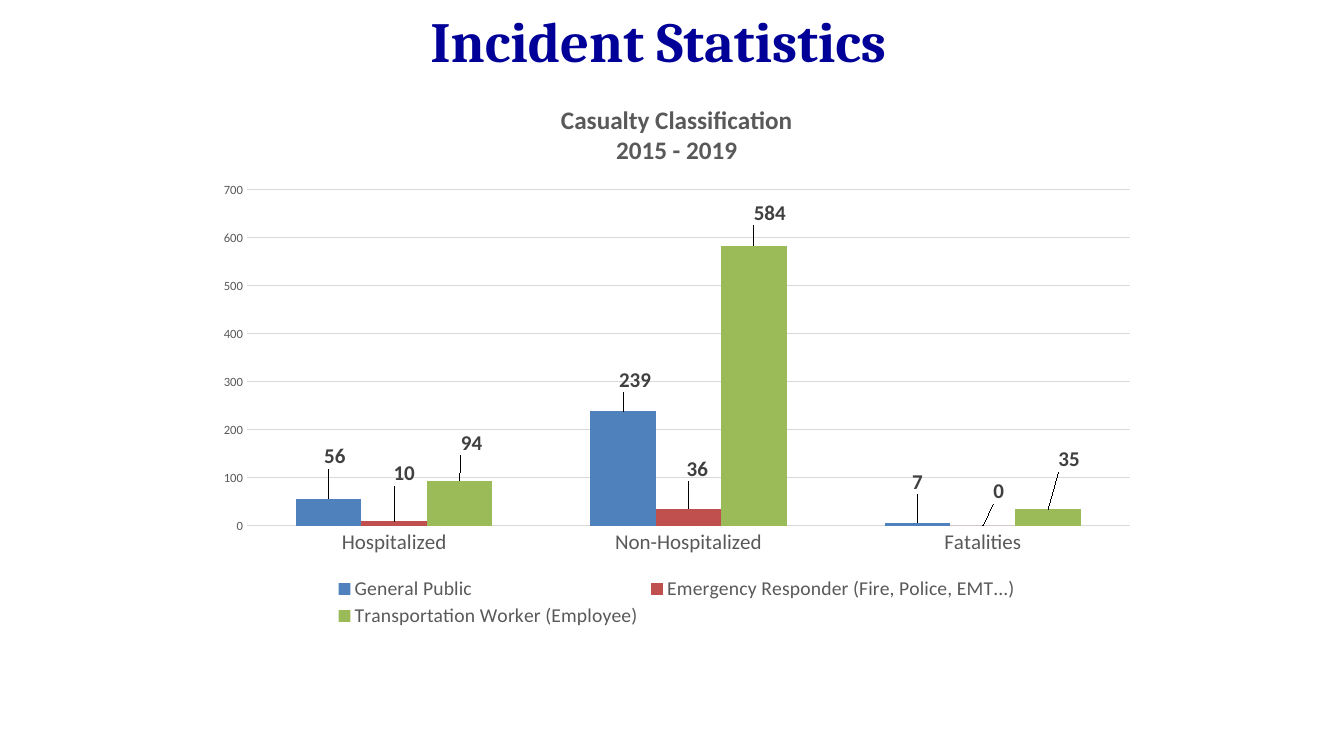
from lxml import etree
from pptx import Presentation
from pptx.chart.data import CategoryChartData
from pptx.dml.color import RGBColor
from pptx.enum.chart import XL_CHART_TYPE, XL_LABEL_POSITION, XL_LEGEND_POSITION, XL_TICK_MARK
from pptx.enum.text import MSO_ANCHOR, PP_ALIGN
from pptx.oxml.ns import qn
from pptx.util import Pt

PX = 9144000 / 1008
NAVY = RGBColor(0x00, 0x00, 0x99)
GRAY = RGBColor(0x59, 0x59, 0x59)
DARK = RGBColor(0x40, 0x40, 0x40)
GRID = RGBColor(0xD9, 0xD9, 0xD9)
BLUE = RGBColor(0x4F, 0x81, 0xBD)
RED = RGBColor(0xC0, 0x50, 0x4D)
GREEN = RGBColor(0x9B, 0xBB, 0x59)

CHART_X, CHART_Y, CHART_W, CHART_H = 205, 84, 944, 549
C15 = "http://schemas.microsoft.com/office/drawing/2012/chart"


def set_font(font, size, color, bold=False, name="Calibri"):
    font.name, font.size, font.bold = name, Pt(size), bold
    font.color.rgb = color


def set_layout(parent, index, *settings, **lengths):
    """Place a chart part; lengths x, y, w, h are px, settings are (tag, value)."""
    for old in parent.findall(qn("c:layout")):
        parent.remove(old)
    layout = etree.Element(qn("c:layout"))
    manual = etree.SubElement(layout, qn("c:manualLayout"))
    fractions = [(tag, f"{px / (CHART_W if tag in 'xw' else CHART_H):.4f}")
                 for tag, px in lengths.items()]
    for tag, value in [*settings, *fractions]:
        etree.SubElement(manual, qn(f"c:{tag}")).set("val", value)
    parent.insert(index, layout)


prs = Presentation()
prs.slide_width, prs.slide_height = round(1344 * PX), round(756 * PX)
s = prs.slides.add_slide(prs.slide_layouts[6])

# Slide title
box = s.shapes.add_textbox(*(round(v * PX) for v in (205, 7, 907, 66)))
tf = box.text_frame
tf.word_wrap = True
tf.vertical_anchor = MSO_ANCHOR.MIDDLE
tf.text = "Incident Statistics"
p = tf.paragraphs[0]
p.alignment = PP_ALIGN.CENTER
set_font(p.runs[0].font, 40.5, NAVY, True, "Cambria")

# Chart data; each label has an offset in px from its usual place above the bar
SERIES = [
    ("General Public", BLUE, (56, 239, 7), ((6, -26), (12, -15), (0, -24))),
    ("Emergency Responder (Fire, Police, EMT...)", RED, (10, 36, 0),
     ((10, -31), (9, -23), (16, -18))),
    ("Transportation Worker (Employee)", GREEN, (94, 584, 35),
     ((12, -21), (16, -16), (21, -33))),
]
data = CategoryChartData()
data.categories = ["Hospitalized", "Non-Hospitalized", "Fatalities"]
for name, color, values, offsets in SERIES:
    data.add_series(name, values)
frame = s.shapes.add_chart(XL_CHART_TYPE.COLUMN_CLUSTERED,
                           *(round(v * PX) for v in (CHART_X, CHART_Y, CHART_W, CHART_H)), data)
chart = frame.chart
set_font(chart.font, 10, GRAY)
edge = ("xMode", "edge"), ("yMode", "edge")

# Chart title
title = chart.chart_title
title.text_frame.text = "Casualty Classification\n2015 - 2019"
for p in title.text_frame.paragraphs:
    p.alignment = PP_ALIGN.CENTER
    set_font(p.runs[0].font, 18, GRAY, True)
set_layout(title._element, 1, *edge, x=353, y=16)

# Legend
chart.has_legend = True
legend = chart.legend
legend.position = XL_LEGEND_POSITION.BOTTOM
legend.include_in_layout = False
set_font(legend.font, 14, GRAY)
set_layout(legend._element, 1, *edge, x=127, y=490, w=690, h=57)

# Axes
for axis, size in ((chart.category_axis, 15), (chart.value_axis, 9)):
    axis.major_tick_mark = axis.minor_tick_mark = XL_TICK_MARK.NONE
    axis.format.line.fill.background()
    set_font(axis.tick_labels.font, size, GRAY)
values_axis = chart.value_axis
values_axis.minimum_scale, values_axis.maximum_scale, values_axis.major_unit = 0, 700, 100
grid_line = values_axis.major_gridlines.format.line
grid_line.color.rgb, grid_line.width = GRID, Pt(0.75)

# Bars and value labels
plot = chart.plots[0]
plot.vary_by_categories = False
plot.gap_width, plot.overlap = 150, 0
set_layout(plot._element.getparent(), 0, ("layoutTarget", "inner"), *edge,
           x=42, y=106, w=883, h=336)
for series, (name, color, values, offsets) in zip(plot.series, SERIES):
    series.format.fill.solid()
    series.format.fill.fore_color.rgb = color
    labels = series.data_labels
    labels.show_value = True
    labels.position = XL_LABEL_POSITION.OUTSIDE_END
    set_font(labels.font, 15, DARK, True)
    for i, (dx, dy) in enumerate(offsets):
        label = series.points[i].data_label
        label.position = XL_LABEL_POSITION.OUTSIDE_END
        set_font(label.font, 15, DARK, True)
        set_layout(labels._element.findall(qn("c:dLbl"))[i], 1, x=dx, y=dy)
    # Moved labels get leader lines unless this extension turns them off
    ext_list = etree.SubElement(labels._element, qn("c:extLst"))
    ext = etree.SubElement(ext_list, qn("c:ext"), nsmap={"c15": C15})
    ext.set("uri", "{CE6537A1-D6FC-4f65-9D91-7224C49458BB}")
    etree.SubElement(ext, f"{{{C15}}}showLeaderLines").set("val", "0")

prs.save("out.pptx")
